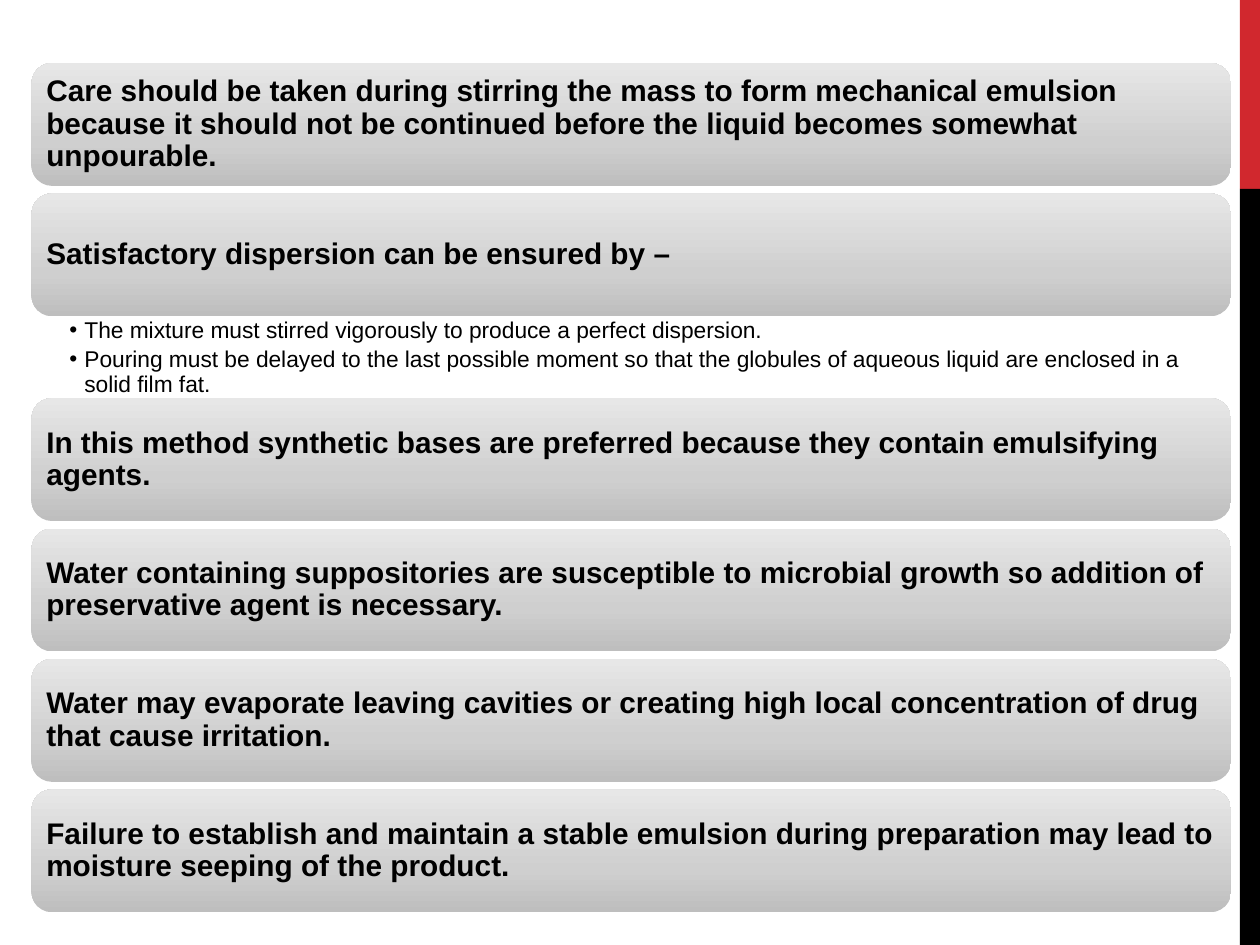
from copy import deepcopy
from dataclasses import dataclass

from lxml import etree
from pptx import Presentation
from pptx.dml.color import RGBColor
from pptx.enum.shapes import MSO_SHAPE
from pptx.enum.text import MSO_ANCHOR, MSO_AUTO_SIZE, PP_ALIGN
from pptx.oxml.ns import qn
from pptx.util import Inches, Pt

RECT, ROUND = MSO_SHAPE.RECTANGLE, MSO_SHAPE.ROUNDED_RECTANGLE
TOP, MIDDLE = MSO_ANCHOR.TOP, MSO_ANCHOR.MIDDLE
LEFT = PP_ALIGN.LEFT
NO_FIT = MSO_AUTO_SIZE.NONE

WIDTH, HEIGHT = 10, 7.5
SIDEBAR_X = 0.984 * WIDTH
CARD_X, CARD_W, CARD_H = 0.025 * WIDTH, 0.952 * WIDTH, 0.13 * HEIGHT
FIRST_Y, GAP, LIST_H = 0.5, 0.06, 0.65

GRADIENT = [(0, "BEBEBE"), (0.35, "CFCFCF"), (1, "E7E7E7")]
CARD_FONT = {"name": "Arial", "size": Pt(17), "bold": True}
LIST_FONT = {"name": "Arial", "size": Pt(13), "bold": False}
CARD_FRAME = {
    "word_wrap": True, "auto_size": NO_FIT, "vertical_anchor": MIDDLE,
    "margin_left": Inches(0.07), "margin_right": Inches(0.07),
    "margin_top": Inches(0.07), "margin_bottom": Inches(0.07),
}
LIST_FRAME = {
    "word_wrap": True, "auto_size": NO_FIT, "vertical_anchor": TOP,
    "margin_left": Inches(0.3), "margin_right": Inches(0.13),
    "margin_top": Inches(0.02), "margin_bottom": Inches(0.02),
}
PARAGRAPH = {"alignment": LEFT, "line_spacing": 0.9, "space_before": Pt(0)}


@dataclass
class Card:
    text: str
    points: tuple[str, ...] = ()


CARDS = [
    Card("Care should be taken during stirring the mass to form mechanical emulsion "
         "because it should not be continued before the liquid becomes somewhat unpourable."),
    Card("Satisfactory dispersion can be ensured by –", (
        "The mixture must stirred vigorously to produce a perfect dispersion.",
        "Pouring must be delayed to the last possible moment so that the globules "
        "of aqueous liquid are enclosed in a solid film fat.")),
    Card("In this method synthetic bases are preferred because they contain "
         "emulsifying agents."),
    Card("Water containing suppositories are susceptible to microbial growth so "
         "addition of preservative agent is necessary."),
    Card("Water may evaporate leaving cavities or creating high local concentration "
         "of drug that cause irritation."),
    Card("Failure to establish and maintain a stable emulsion during preparation may "
         "lead to moisture seeping of the product."),
]


def color(value: str) -> RGBColor:
    return RGBColor.from_string(value)


def apply(target, values: dict) -> None:
    for name, value in values.items():
        setattr(target, name, value)


def write(p, text: str, font: dict) -> None:
    apply(p, PARAGRAPH)
    r = p.add_run()
    r.text = text
    apply(r.font, font)
    r.font.color.rgb = color("000000")


def add_shape(slide, kind, x: float, y: float, w: float, h: float):
    s = slide.shapes.add_shape(kind, Inches(x), Inches(y), Inches(w), Inches(h))
    s.shadow.inherit = False
    s.line.fill.background()
    return s


def add_band(slide, y: float, h: float, fill: str) -> None:
    s = add_shape(slide, RECT, SIDEBAR_X, y, WIDTH - SIDEBAR_X, h)
    s.fill.solid()
    s.fill.fore_color.rgb = color(fill)


def fill_gradient(s) -> None:
    s.fill.gradient()
    s.fill.gradient_angle = 90
    stops = s._element.spPr.find(".//" + qn("a:gsLst"))
    stops.append(deepcopy(stops[0]))
    for stop, (position, value) in zip(s.fill.gradient_stops, GRADIENT):
        stop.position = position
        stop.color.rgb = color(value)


def add_card(slide, text: str, y: float) -> None:
    s = add_shape(slide, ROUND, CARD_X, y, CARD_W, CARD_H)
    fill_gradient(s)
    tf = s.text_frame
    apply(tf, CARD_FRAME)
    write(tf.paragraphs[0], text, CARD_FONT)


def place_list(body, points: tuple[str, ...], y: float) -> None:
    apply(body, {"left": Inches(CARD_X), "top": Inches(y),
                 "width": Inches(CARD_W), "height": Inches(LIST_H)})
    tf = body.text_frame
    apply(tf, LIST_FRAME)
    for i, point in enumerate(points):
        p = tf.add_paragraph() if i else tf.paragraphs[0]
        p.level = 1
        pPr = p._p.get_or_add_pPr()
        pPr.set("marL", str(Inches(0.12)))
        pPr.set("indent", str(Inches(-0.12)))
        etree.SubElement(pPr, qn("a:buChar")).set("char", "•")
        write(p, point, LIST_FONT)
        p.space_after = Pt(2.6)


def main() -> None:
    prs = Presentation()
    prs.slide_width, prs.slide_height = Inches(WIDTH), Inches(HEIGHT)
    slide = prs.slides.add_slide(prs.slide_layouts[1])
    title = slide.shapes.title._element
    title.getparent().remove(title)
    body = slide.placeholders[1]

    add_band(slide, 0, 0.2 * HEIGHT, "D1282E")
    add_band(slide, 0.2 * HEIGHT, 0.8 * HEIGHT, "000000")

    y = FIRST_Y
    for card in CARDS:
        add_card(slide, card.text, y)
        y += CARD_H
        if card.points:
            place_list(body, card.points, y)
            y += LIST_H
        else:
            y += GAP

    prs.save("out.pptx")


if __name__ == "__main__":
    main()
